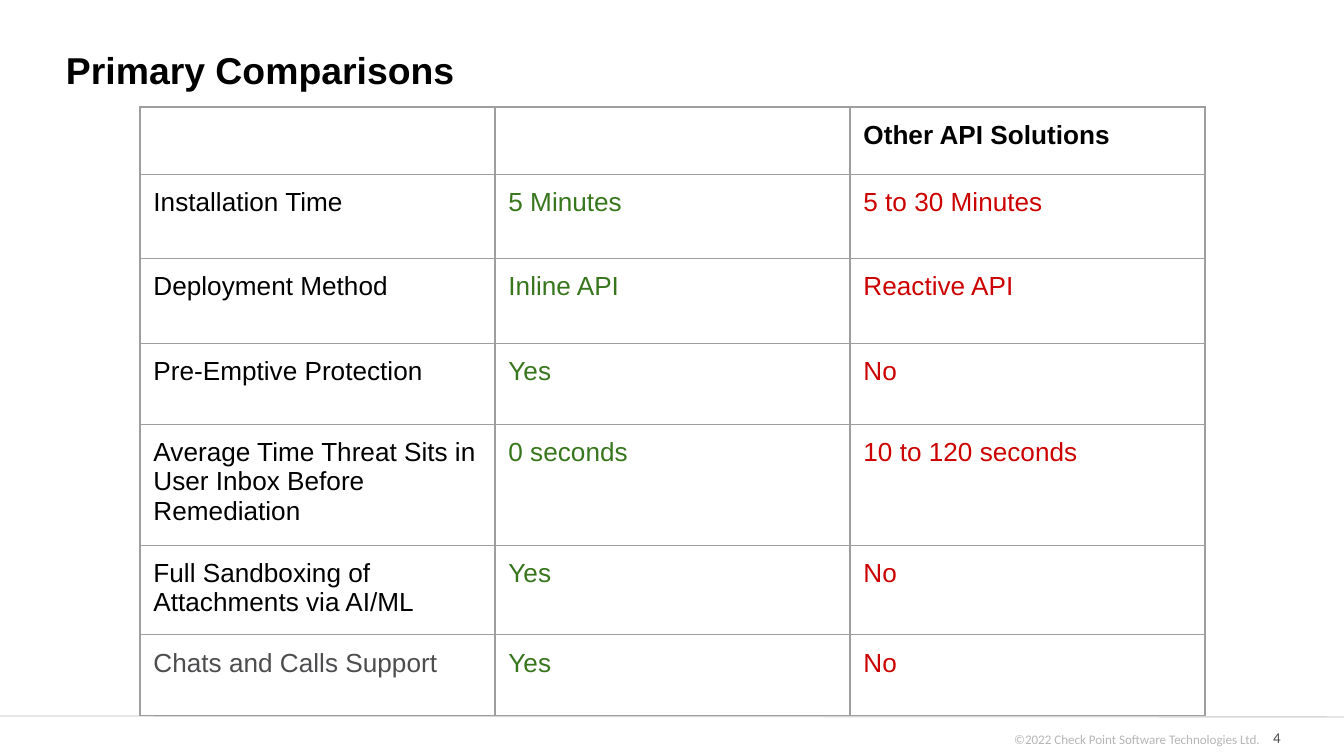
"""Build a comparison table slide."""
import lxml.etree
import pptx
import pptx.dml.color
import pptx.enum.shapes
import pptx.enum.text
import pptx.oxml.ns
import pptx.util

EMU_PER_PX = 914400 / 134.4
ANCHOR = pptx.enum.text.MSO_ANCHOR
ALIGN = pptx.enum.text.PP_ALIGN
BLACK, GREEN, RED, GRAY = "000000", "38761D", "CC0000", "4D4D4F"
ROW_HEIGHTS = [65, 84, 85, 81, 119, 88, 81]
COLUMN_WIDTH = 355
ROWS = [
    ("", "", "Other API Solutions"),
    ("Installation Time", "5 Minutes", "5 to 30 Minutes"),
    ("Deployment Method", "Inline API", "Reactive API"),
    ("Pre-Emptive Protection", "Yes", "No"),
    ("Average Time Threat Sits in User Inbox Before Remediation", "0 seconds", "10 to 120 seconds"),
    ("Full Sandboxing of Attachments via AI/ML", "Yes", "No"),
    ("Chats and Calls Support", "Yes", "No"),
]


def px(n):
    return pptx.util.Emu(round(n * EMU_PER_PX))


def rgb(value):
    return pptx.dml.color.RGBColor.from_string(value)


def apply(target, values):
    for name, value in values.items():
        setattr(target, name, value)


class Deck:
    def __init__(self):
        self.prs = pptx.Presentation()
        apply(self.prs, {"slide_width": px(1344), "slide_height": px(756)})
        self.s = self.prs.slides.add_slide(self.prs.slide_layouts[5])

    def add_run(self, tf, text, size, color, font="Arial", bold=False, align=ALIGN.LEFT):
        p = tf.paragraphs[0]
        p.alignment = align
        r = p.add_run()
        r.text = text
        apply(r.font, {"name": font, "size": pptx.util.Pt(size), "bold": bold})
        r.font.color.rgb = rgb(color)

    def title(self, text, left, top, width, height):
        sp = self.s.shapes.title
        apply(sp, {"left": px(left), "top": px(top), "width": px(width), "height": px(height)})
        tf = sp.text_frame
        apply(tf, {"margin_left": 0, "margin_right": 0, "margin_top": 0, "margin_bottom": 0,
                   "vertical_anchor": ANCHOR.TOP, "word_wrap": True,
                   "auto_size": pptx.enum.text.MSO_AUTO_SIZE.NONE})
        self.add_run(tf, text, 20, BLACK, bold=True)

    def text(self, text, left, top, width, height, size, color, align=ALIGN.LEFT):
        sp = self.s.shapes.add_textbox(px(left), px(top), px(width), px(height))
        apply(sp.text_frame, {"word_wrap": True, "vertical_anchor": ANCHOR.MIDDLE})
        self.add_run(sp.text_frame, text, size, color, "Calibri", align=align)

    def line(self, x1, y1, x2, y2, color):
        cx = self.s.shapes.add_connector(
            pptx.enum.shapes.MSO_CONNECTOR.STRAIGHT, px(x1), px(y1), px(x2), px(y2))
        cx.line.color.rgb = rgb(color)
        cx.line.width = pptx.util.Pt(0.75)
        lxml.etree.SubElement(cx._element.spPr, pptx.oxml.ns.qn("a:effectLst"))

    def borders(self, cell, color):
        tcPr = cell._tc.get_or_add_tcPr()
        for i, side in enumerate(("lnL", "lnR", "lnT", "lnB")):
            ln = pptx.oxml.parse_xml(
                f'<a:{side} {pptx.oxml.ns.nsdecls("a")} w="9525"><a:solidFill>'
                f'<a:srgbClr val="{color}"/></a:solidFill></a:{side}>')
            tcPr.insert(i, ln)

    def table(self, rows, left, top, heights, width):
        columns = len(rows[0])
        table = self.s.shapes.add_table(
            len(rows), columns, px(left), px(top), px(width * columns), px(sum(heights))).table
        apply(table, {"first_row": False, "horz_banding": False})
        for column in table.columns:
            column.width = px(width)
        for i, (row, height) in enumerate(zip(rows, heights)):
            table.rows[i].height = px(height)
            label_color = GRAY if i == len(rows) - 1 else BLACK
            colors = (label_color, GREEN, RED) if i else (BLACK,) * columns
            for j, (text, color) in enumerate(zip(row, colors)):
                cell = table.cell(i, j)
                cell.fill.background()
                self.borders(cell, "9E9E9E")
                margin = pptx.util.Inches(0.1)
                apply(cell, {"margin_left": margin, "margin_right": margin,
                             "margin_top": margin, "margin_bottom": margin})
                if text:
                    self.add_run(cell.text_frame, text, 14, color, bold=i == 0)


def main():
    deck = Deck()
    deck.text("4", 1091, 723, 203, 30, 8, GRAY, ALIGN.RIGHT)
    deck.text("©2022 Check Point Software Technologies Ltd.", 1001, 722, 302, 34, 7, "B6B6B8")
    deck.line(0, 716, 1344, 717, "D8D8D8")
    deck.title("Primary Comparisons", 66, 47, 1216, 46)
    deck.table(ROWS, 140, 107, ROW_HEIGHTS, COLUMN_WIDTH)
    deck.prs.save("out.pptx")


if __name__ == "__main__":
    main()
